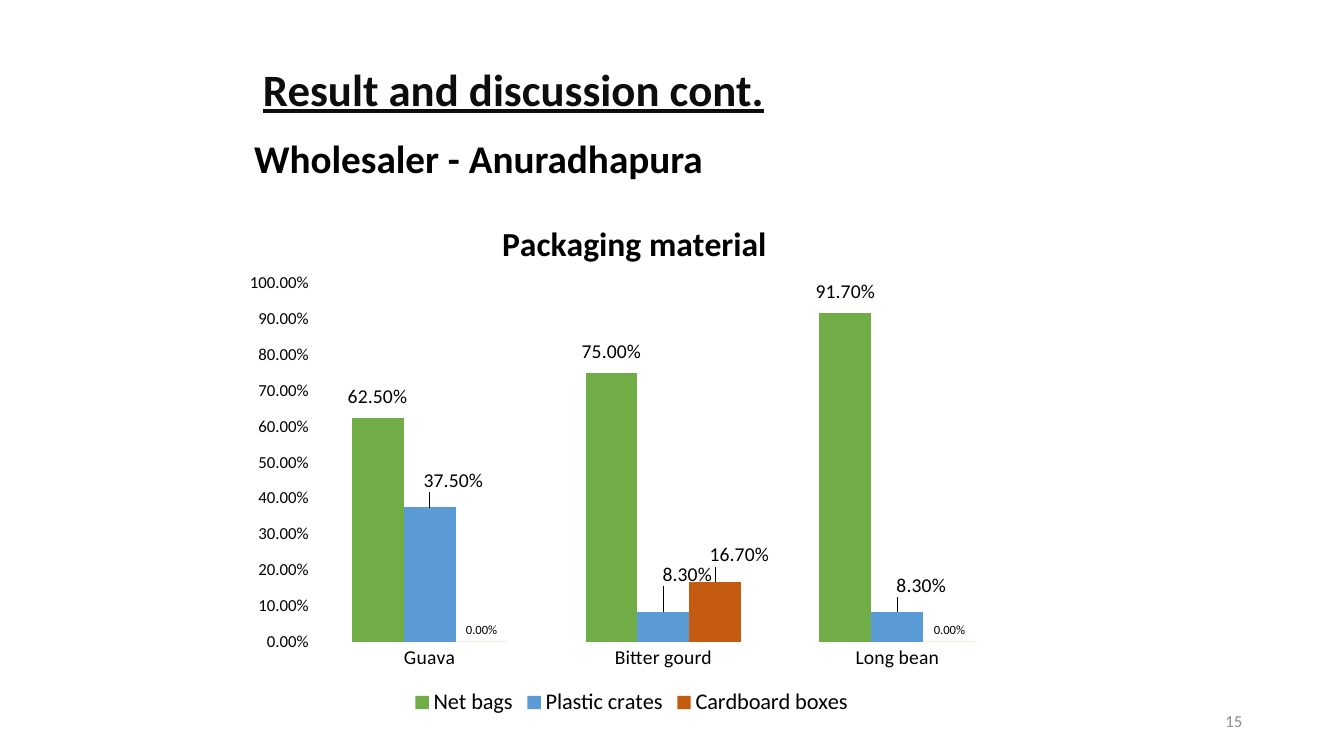
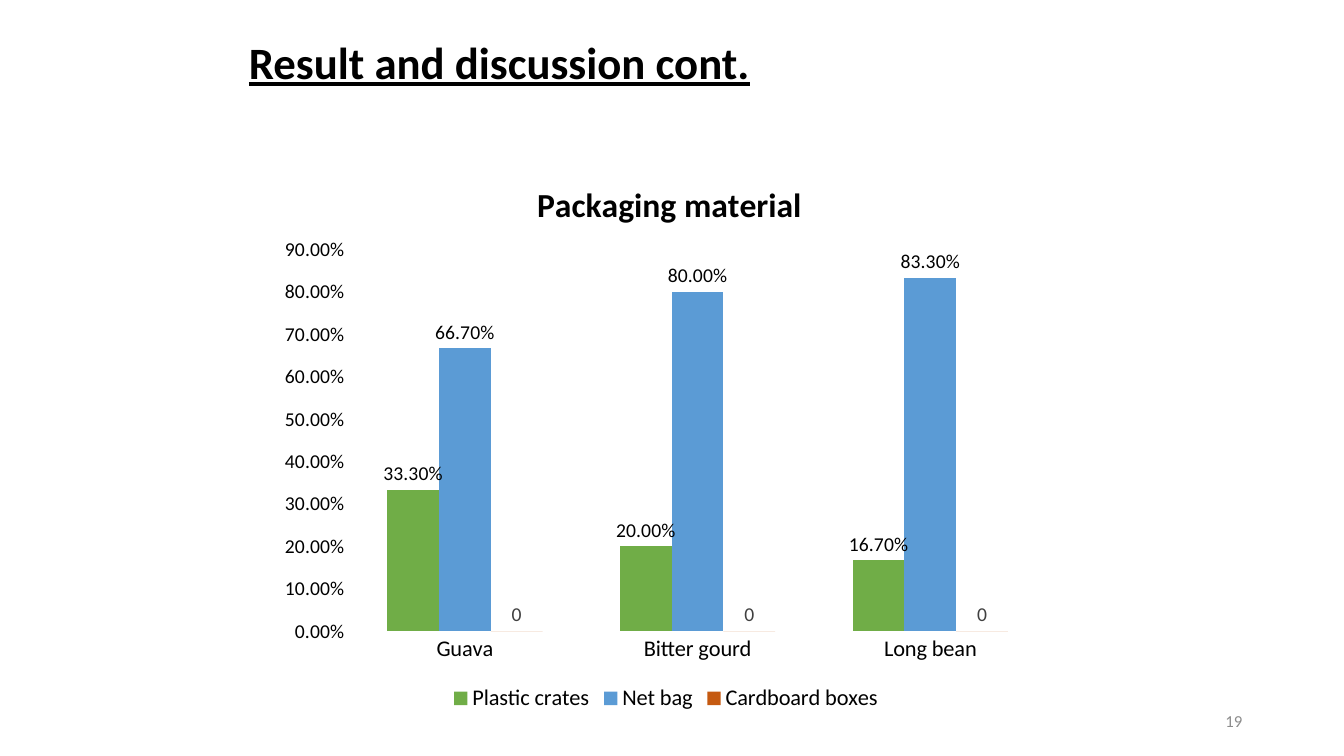
from dataclasses import dataclass

from lxml import etree
from pptx import Presentation
from pptx.chart.data import CategoryChartData
from pptx.dml.color import RGBColor
from pptx.enum.chart import XL_CHART_TYPE, XL_LABEL_POSITION, XL_LEGEND_POSITION, XL_TICK_MARK
from pptx.enum.text import MSO_ANCHOR, PP_ALIGN
from pptx.oxml.ns import qn
from pptx.util import Inches, Pt

COLUMNS = XL_CHART_TYPE.COLUMN_CLUSTERED
OUTSIDE = XL_LABEL_POSITION.OUTSIDE_END
BOTTOM = XL_LEGEND_POSITION.BOTTOM
NO_TICK = XL_TICK_MARK.NONE
TOP, MIDDLE = MSO_ANCHOR.TOP, MSO_ANCHOR.MIDDLE
LEFT, CENTER, RIGHT = PP_ALIGN.LEFT, PP_ALIGN.CENTER, PP_ALIGN.RIGHT


@dataclass
class Theme:
    font: str = "Calibri"
    ink: str = "000000"
    soft_ink: str = "0D0D0D"
    label_gray: str = "404040"
    page_gray: str = "8C8C8C"
    bars: tuple = ("70AD47", "5B9BD5", "C55A11")
    title: int = 32
    subtitle: int = 28
    chart_title: int = 24
    legend: int = 16
    label: int = 14
    axis: int = 12
    small: int = 9


T = Theme()


def add_text(s, box, text, size, color, align=LEFT, anchor=MIDDLE, bold=False, underline=False):
    tf = s.shapes.add_textbox(*map(Inches, box)).text_frame
    tf.word_wrap = True
    tf.vertical_anchor = anchor
    p = tf.paragraphs[0]
    p.alignment = align
    if underline:
        p.line_spacing = 0.9
    r = p.add_run()
    r.text = text
    f = r.font
    f.name, f.size, f.bold, f.underline = T.font, Pt(size), bold, underline
    f.color.rgb = RGBColor.from_string(color)


def place(parent, index, **settings):
    for old in parent.findall(qn("c:layout")):
        parent.remove(old)
    layout = etree.Element(qn("c:layout"))
    parent.insert(index, layout)
    manual = etree.SubElement(layout, qn("c:manualLayout"))
    for tag, value in settings.items():
        etree.SubElement(manual, qn("c:" + tag)).set("val", str(value))


SLIDES = [
    dict(
        page="15", title_box=(2.51, 0.27, 10.15, 1.29), title_color=T.soft_ink,
        subtitle="Wholesaler - Anuradhapura",
        chart_box=(2.31, 1.92, 7.91, 5.23), title_y=0.04, plot_y=0.17, plot_h=0.68,
        maximum=1.0, value_size=T.axis, category_size=T.label,
        series=[
            ("Net bags", (0.625, 0.75, 0.917), "0.00%", T.label, T.ink),
            ("Plastic crates", (0.375, 0.083, 0.083), "0.00%", T.label, T.ink),
            ("Cardboard boxes", (0, 0.167, 0), "0.00%", T.small, T.ink),
        ],
        label_shifts=[
            {0: (0, -0.01), 1: (0, -0.01), 2: (0, -0.01)},
            {0: (0.03, -0.02), 1: (0.03, -0.04), 2: (0.03, -0.02)},
            {1: (0.03, -0.02)},
        ],
    ),
    dict(
        page="19", title_box=(2.37, 0, 10.15, 1.29), title_color=T.ink,
        subtitle=None,
        chart_box=(2.67, 1.46, 7.87, 5.65), title_y=0.05, plot_y=0.18, plot_h=0.67,
        maximum=0.9, value_size=T.label, category_size=T.legend,
        series=[
            ("Plastic crates", (0.333, 0.2, 0.167), "0.00%", T.label, T.ink),
            ("Net bag", (0.667, 0.8, 0.833), "0.00%", T.label, T.ink),
            ("Cardboard boxes", (0, 0, 0), "General", T.label, T.label_gray),
        ],
        label_shifts=[{}, {}, {}],
    ),
]

prs = Presentation()
prs.slide_width, prs.slide_height = Inches(13.33), Inches(7.5)

for page in SLIDES:
    s = prs.slides.add_slide(prs.slide_layouts[6])
    add_text(s, (9.42, 6.95, 3, 0.4), page["page"], T.axis, T.page_gray, RIGHT)
    add_text(s, page["title_box"], "Result and discussion cont.", T.title,
             page["title_color"], bold=True, underline=True)
    if page["subtitle"]:
        add_text(s, (2.11, 1.28, 5.27, 0.57), page["subtitle"], T.subtitle, T.ink,
                 CENTER, TOP, bold=True)

    data = CategoryChartData()
    data.categories = ["Guava", "Bitter gourd", "Long bean"]
    for name, values, number_format, size, color in page["series"]:
        data.add_series(name, values, number_format)
    chart = s.shapes.add_chart(COLUMNS, *map(Inches, page["chart_box"]), data).chart
    chart.font.name = T.font
    chart.font.size = Pt(T.label)
    chart.font.color.rgb = RGBColor.from_string(T.ink)

    chart.has_title = True
    title = chart.chart_title
    title.include_in_layout = False
    r = title.text_frame.paragraphs[0].add_run()
    r.text = "Packaging material"
    r.font.name, r.font.size, r.font.bold = T.font, Pt(T.chart_title), True
    r.font.color.rgb = RGBColor.from_string(T.ink)
    place(title._element, 1, xMode="edge", yMode="edge", x=0.33, y=page["title_y"])

    chart.has_legend = True
    chart.legend.position = BOTTOM
    chart.legend.include_in_layout = False
    chart.legend.font.size = Pt(T.legend)

    plot_area = chart._chartSpace.find(qn("c:chart")).find(qn("c:plotArea"))
    place(plot_area, 0, layoutTarget="inner", xMode="edge", yMode="edge",
          x=0.1, y=page["plot_y"], w=0.88, h=page["plot_h"])

    value_axis = chart.value_axis
    value_axis.minimum_scale, value_axis.maximum_scale = 0, page["maximum"]
    value_axis.major_unit = 0.1
    value_axis.tick_labels.number_format = "0.00%"
    value_axis.tick_labels.number_format_is_linked = False
    for axis, size in ((value_axis, page["value_size"]), (chart.category_axis, page["category_size"])):
        axis.has_major_gridlines = False
        axis.major_tick_mark = axis.minor_tick_mark = NO_TICK
        axis.format.line.fill.background()
        axis.tick_labels.font.size = Pt(size)

    plot = chart.plots[0]
    plot.gap_width, plot.overlap = 150, 0
    plot.vary_by_categories = False
    for series, row, bar, shifts in zip(plot.series, page["series"], T.bars, page["label_shifts"]):
        name, values, number_format, size, color = row
        series.format.fill.solid()
        series.format.fill.fore_color.rgb = RGBColor.from_string(bar)
        labels = series.data_labels
        labels.show_value = True
        labels.position = OUTSIDE
        labels.number_format = number_format
        labels.number_format_is_linked = False
        labels.font.name, labels.font.size = T.font, Pt(size)
        labels.font.color.rgb = RGBColor.from_string(color)
        for i, (dx, dy) in shifts.items():
            label = series.points[i].data_label
            label.position = OUTSIDE
            label.font.name, label.font.size = T.font, Pt(T.label)
            label.font.color.rgb = RGBColor.from_string(color)
            newest = labels._element.findall(qn("c:dLbl"))[-1]
            place(newest, 1, x=dx, y=dy)

prs.save("out.pptx")
